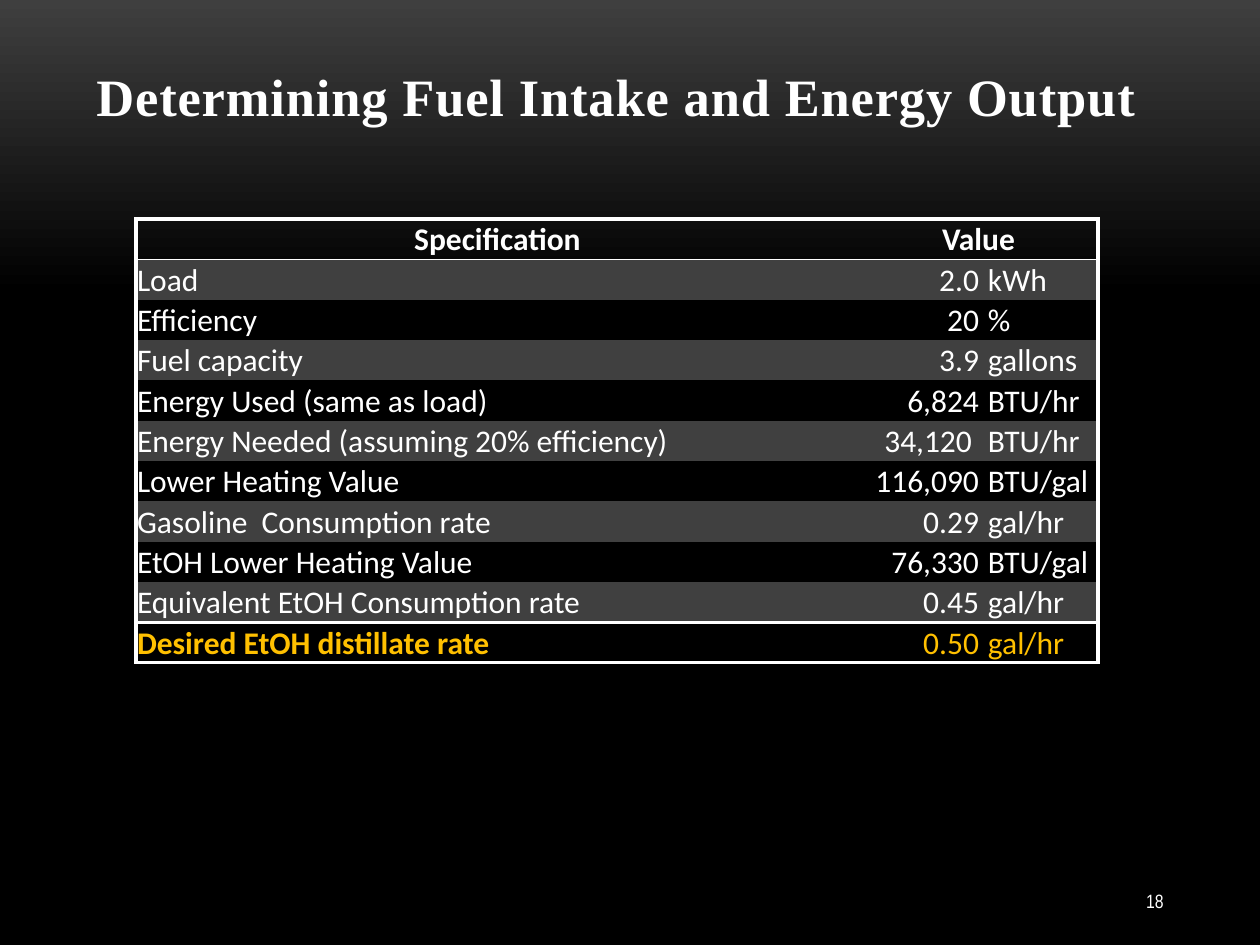
import pptx
import pptx.dml.color
import pptx.enum.text
import pptx.oxml
import pptx.oxml.ns
import pptx.util

PX = 914400 / 126  # EMU in one px
ALIGN = pptx.enum.text.PP_ALIGN
ANCHOR = pptx.enum.text.MSO_ANCHOR


class Theme:
    white = "FFFFFF"
    gold = "FFC000"
    band = "404040"
    background = (("3F3F3F", 0), ("000000", 0.31))
    title = {"name": "Times New Roman", "size": 30, "bold": True, "color": white}
    body = {"name": "Calibri", "size": 18, "bold": False, "color": white}
    number = {"name": "Arial Narrow", "size": 11, "bold": False, "color": white}
    thick, thin = 2.25, 1


HEADER = ("Specification", "Value", "")
ROWS = (
    ("Load", "2.0", "kWh"),
    ("Efficiency", "20", "%"),
    ("Fuel capacity", "3.9", "gallons"),
    ("Energy Used (same as load)", "6,824", "BTU/hr"),
    ("Energy Needed (assuming 20% efficiency)", "34,120", "BTU/hr"),
    ("Lower Heating Value", "116,090", "BTU/gal"),
    ("Gasoline  Consumption rate", "0.29", "gal/hr"),
    ("EtOH Lower Heating Value", "76,330", "BTU/gal"),
    ("Equivalent EtOH Consumption rate", "0.45", "gal/hr"),
    ("Desired EtOH distillate rate", "0.50", "gal/hr"),
)
COLUMN_WIDTHS = (723, 121, 118)
TABLE_HEIGHT = 444
UNIT_GAP = 8


def px(length):
    return pptx.util.Emu(round(length * PX))


def rgb(color):
    return pptx.dml.color.RGBColor.from_string(color)


def set_text(text_frame, text, style, alignment):
    """Write one run in the given type style and return it."""
    paragraph = text_frame.paragraphs[0]
    paragraph.alignment = alignment
    run = paragraph.add_run()
    run.text = text
    values = {"name": style["name"], "size": pptx.util.Pt(style["size"]), "bold": style["bold"]}
    for name, value in values.items():
        setattr(run.font, name, value)
    run.font.color.rgb = rgb(style["color"])
    return run


def paint_background(slide):
    fill = slide.background.fill
    fill.gradient()
    fill.gradient_angle = 270
    for stop, (color, position) in zip(fill.gradient_stops, Theme.background):
        stop.color.rgb = rgb(color)
        stop.position = position


def add_text(slide, box, text, style, alignment, anchor):
    frame = slide.shapes.add_textbox(*map(px, box)).text_frame
    frame.word_wrap = True
    frame.vertical_anchor = anchor
    return set_text(frame, text, style, alignment)


def set_borders(cell, widths):
    """Draw the sides named in widths (points) and clear the others."""
    properties = cell._tc.get_or_add_tcPr()
    for index, side in enumerate("LRTB"):
        width = widths.get(side, 0)
        paint = f'<a:solidFill><a:srgbClr val="{Theme.white}"/></a:solidFill>' if width else "<a:noFill/>"
        line = pptx.oxml.parse_xml(
            f'<a:ln{side} {pptx.oxml.ns.nsdecls("a")} w="{pptx.util.Pt(width)}">{paint}</a:ln{side}>'
        )
        properties.insert(index, line)


def cell_borders(row, column):
    last = len(ROWS)
    rules = {0: Theme.thick, 1: Theme.thin, last: Theme.thick, last + 1: Theme.thick}
    return {
        "L": Theme.thick if column == 0 else 0,
        "R": Theme.thick if column == 2 or (row, column) == (0, 1) else 0,
        "T": rules.get(row, 0),
        "B": rules.get(row + 1, 0),
    }


def format_cell(cell, row, column, text):
    is_header, is_result = row == 0, row == len(ROWS)
    margins = {"margin_left": px(1), "margin_right": px(1), "margin_top": px(1), "margin_bottom": 0}
    if column == 2:
        margins["margin_left"] = px(UNIT_GAP)
    if text == "34,120":
        margins["margin_right"] = px(UNIT_GAP)
    for name, value in {**margins, "vertical_anchor": ANCHOR.BOTTOM}.items():
        setattr(cell, name, value)

    # Odd rows are banded
    if row % 2:
        cell.fill.solid()
        cell.fill.fore_color.rgb = rgb(Theme.band)
    else:
        cell.fill.background()
    set_borders(cell, cell_borders(row, column))

    if text:
        style = dict(Theme.body, bold=is_header or (is_result and column == 0))
        if is_result:
            style["color"] = Theme.gold
        alignment = ALIGN.CENTER if is_header else (ALIGN.LEFT, ALIGN.RIGHT, ALIGN.LEFT)[column]
        set_text(cell.text_frame, text, style, alignment)


def add_specification_table(slide, left, top):
    records = (HEADER, *ROWS)
    count = len(records)
    box = (left, top, sum(COLUMN_WIDTHS), TABLE_HEIGHT)
    table = slide.shapes.add_table(count, len(COLUMN_WIDTHS), *map(px, box)).table
    table.first_row = table.horz_banding = False
    for column, width in zip(table.columns, COLUMN_WIDTHS):
        column.width = px(width)
    for row in table.rows:
        row.height = px(TABLE_HEIGHT / count)
    table.cell(0, 1).merge(table.cell(0, 2))
    for row, record in enumerate(records):
        for column, text in enumerate(record):
            format_cell(table.cell(row, column), row, column, text)


def main():
    presentation = pptx.Presentation()
    presentation.slide_width, presentation.slide_height = px(1260), px(945)
    slide = presentation.slides.add_slide(presentation.slide_layouts[6])
    paint_background(slide)

    # Title, with letters spaced by half a point
    title = add_text(slide, (84, 42, 1092, 91), "Determining Fuel Intake and Energy Output",
                     Theme.title, ALIGN.LEFT, ANCHOR.BOTTOM)
    title._r.get_or_add_rPr().set("spc", "50")

    # Specifications
    add_specification_table(slide, 136, 219)

    # Slide number
    add_text(slide, (1040, 876, 136, 50), "18", Theme.number, ALIGN.RIGHT, ANCHOR.MIDDLE)

    presentation.save("out.pptx")


if __name__ == "__main__":
    main()
